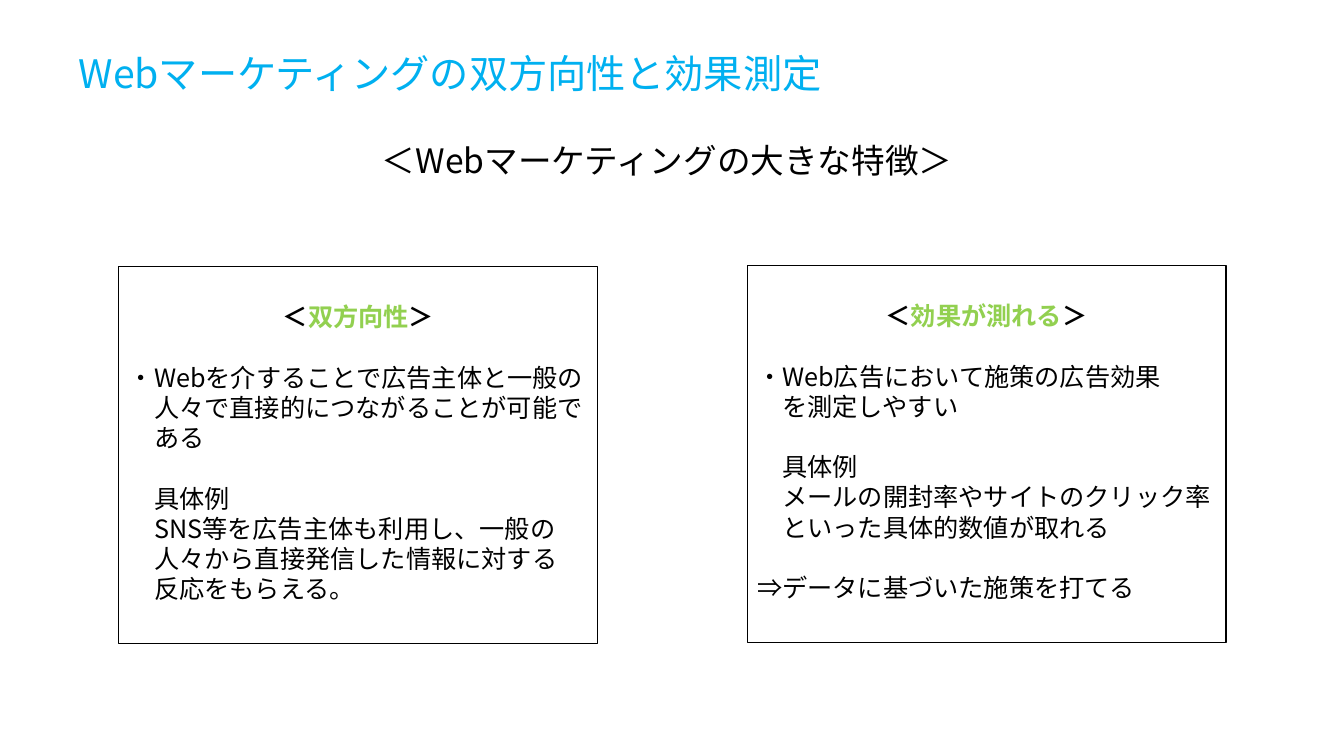
import pptx
import pptx.dml.color
import pptx.enum.shapes
import pptx.enum.text
import pptx.util
from lxml import etree
from pptx.util import Inches, Pt

ALIGN = pptx.enum.text.PP_ALIGN
ANCHOR = pptx.enum.text.MSO_ANCHOR
BLACK, BLUE, GREEN = "000000", "00B0F0", "92D050"


def colour(code):
    return pptx.dml.color.RGBColor.from_string(code)


class SlideBuilder:
    font = "Noto Sans CJK JP"
    line_ratio = 1.2
    body_size = 18

    def __init__(self, page):
        self.page = page

    def add_span(self, para, text, size, code=BLACK, bold=False):
        span = para.add_run()
        span.text = text
        span.font.name = self.font
        span.font.size = Pt(size)
        span.font.bold = bold
        span.font.color.rgb = colour(code)
        # East Asian glyphs need their own font entry
        properties = span._r.get_or_add_rPr()
        latin = properties.find(pptx.oxml.ns.qn("a:latin"))
        east_asian = etree.Element(pptx.oxml.ns.qn("a:ea"), typeface=self.font)
        latin.addnext(east_asian)

    def format_para(self, para, size, align=ALIGN.LEFT, gap=False, indent=False):
        line = Pt(size * self.line_ratio)
        para.alignment = align
        para.line_spacing = line
        para.space_before = line if gap else Pt(0)
        para.space_after = Pt(0)
        if indent:
            properties = para._p.get_or_add_pPr()
            properties.set("marL", str(Pt(size)))
            properties.set("indent", "0")

    def title(self, text, left, top, width, height):
        box = self.page.shapes.title
        box.left, box.top = Inches(left), Inches(top)
        box.width, box.height = Inches(width), Inches(height)
        frame = box.text_frame
        frame.word_wrap = False
        frame.vertical_anchor = ANCHOR.MIDDLE
        self.format_para(frame.paragraphs[0], 28)
        self.add_span(frame.paragraphs[0], text, 28, BLUE)

    def label(self, text, left, top, width, height, size):
        box = self.page.shapes.add_textbox(
            Inches(left), Inches(top), Inches(width), Inches(height))
        box.text_frame.word_wrap = True
        para = box.text_frame.paragraphs[0]
        self.format_para(para, size)
        self.add_span(para, text, size)

    def card(self, heading, groups, left, top, width, height):
        box = self.page.shapes.add_shape(
            pptx.enum.shapes.MSO_SHAPE.RECTANGLE,
            Inches(left), Inches(top), Inches(width), Inches(height))
        box.shadow.inherit = False
        box.fill.background()
        box.line.color.rgb = colour(BLACK)
        box.line.width = Pt(0.75)
        frame = box.text_frame
        frame.word_wrap = True
        frame.vertical_anchor = ANCHOR.TOP
        frame.margin_top = Inches(0.35)

        # Heading in brackets
        para = frame.paragraphs[0]
        self.format_para(para, self.body_size, ALIGN.CENTER)
        for text, code in (("＜", BLACK), (heading, GREEN), ("＞", BLACK)):
            self.add_span(para, text, self.body_size, code, bold=True)

        # Groups of lines, each set off by one line of space
        for lines in groups:
            for number, text in enumerate(lines):
                para = frame.add_paragraph()
                self.format_para(para, self.body_size, gap=number == 0,
                                 indent=text[0] not in "・⇒")
                self.add_span(para, text, self.body_size)


def main():
    deck = pptx.Presentation()
    deck.slide_width, deck.slide_height = Inches(13.33), Inches(7.5)
    builder = SlideBuilder(deck.slides.add_slide(deck.slide_layouts[5]))

    # Title and subtitle
    builder.title("Webマーケティングの双方向性と効果測定", 0.68, 0.44, 7.69, 0.57)
    builder.label("＜Webマーケティングの大きな特徴＞", 3.69, 1.34, 5.95, 0.5, 24)

    # Two feature cards
    two_way = [
        ["・Webを介することで広告主体と一般の",
         "人々で直接的につながることが可能で",
         "ある"],
        ["具体例",
         "SNS等を広告主体も利用し、一般の",
         "人々から直接発信した情報に対する",
         "反応をもらえる。"],
    ]
    measurable = [
        ["・Web広告において施策の広告効果",
         "を測定しやすい"],
        ["具体例",
         "メールの開封率やサイトのクリック率",
         "といった具体的数値が取れる"],
        ["⇒データに基づいた施策を打てる"],
    ]
    builder.card("双方向性", two_way, 1.18, 2.64, 4.75, 3.74)
    builder.card("効果が測れる", measurable, 7.41, 2.63, 4.75, 3.74)

    deck.save("out.pptx")


if __name__ == "__main__":
    main()
